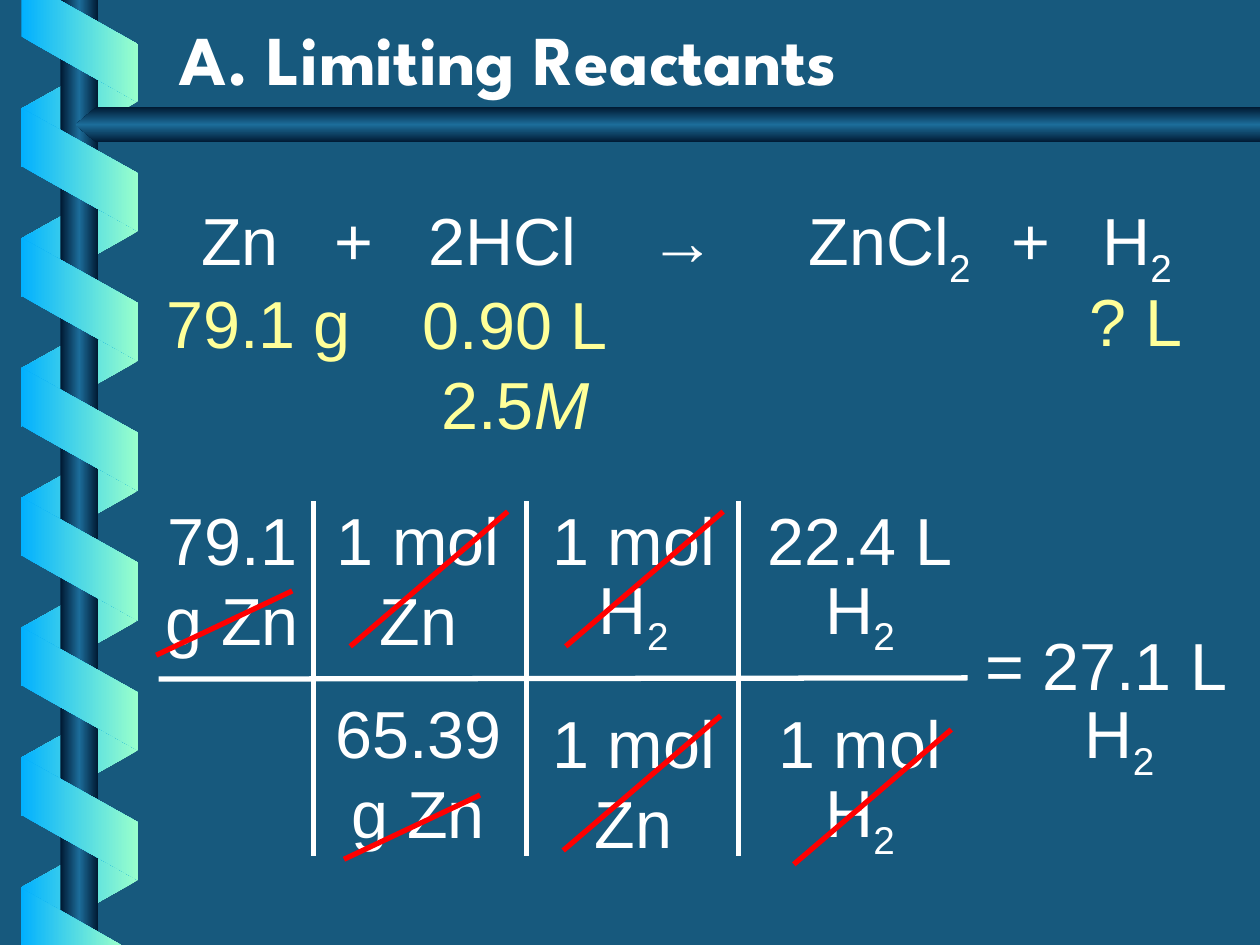
from dataclasses import dataclass

from lxml.etree import SubElement
from pptx import Presentation
from pptx.dml.color import RGBColor as RGB
from pptx.enum.shapes import MSO_CONNECTOR as CONN, MSO_SHAPE as SHAPE
from pptx.enum.text import MSO_ANCHOR as ANCHOR, PP_ALIGN as ALIGN
from pptx.oxml import parse_xml
from pptx.oxml.ns import nsdecls, qn
from pptx.util import Inches, Pt


@dataclass(frozen=True)
class Theme:
    background: str = "17597D"
    white: str = "FFFFFF"
    given: str = "FFFF99"
    strike: str = "FF0000"
    shadow: str = "001932"
    ribbon: tuple = ((0, "01B0FF"), (100, "99FFCC"))
    ribbon_back: tuple = ((0, "99FFCC"), (100, "01B0FF"))
    bar: tuple = ((0, "001932"), (50, "1C6D9A"), (100, "001932"))
    title_font: str = "League Spartan"
    body_font: str = "Arial"
    title_size: float = 40
    body_size: float = 38
    leading: float = 45.6
    line_width: float = 3


class SlideBuilder:
    def __init__(self, slide, theme):
        self.slide, self.theme = slide, theme
        fill = slide.background.fill
        fill.solid()
        fill.fore_color.rgb = RGB.from_string(theme.background)

    def gradient(self, sp, stops, angle=0):
        sp.shadow.inherit = False
        sp.line.fill.background()
        sp.fill.background()
        gs = "".join(
            f'<a:gs pos="{pos * 1000}"><a:srgbClr val="{color}"/></a:gs>'
            for pos, color in stops
        )
        grad = parse_xml(
            f'<a:gradFill {nsdecls("a")} rotWithShape="0"><a:gsLst>{gs}</a:gsLst>'
            f'<a:lin ang="{angle * 60000}" scaled="1"/></a:gradFill>'
        )
        props = sp._element.spPr
        props.replace(props.find(qn("a:noFill")), grad)

    def shape(self, kind, box, stops, angle=0, rotation=0, flip=False, adj=None):
        sp = self.slide.shapes.add_shape(kind, *map(Inches, box))
        sp.rotation = rotation
        if adj is not None:
            sp.adjustments[0] = adj
        if flip:
            sp._element.spPr.xfrm.set("flipH", "1")
        self.gradient(sp, stops, angle)

    def outline(self, points, stops):
        start, *rest = [(Inches(x), Inches(y)) for x, y in points]
        builder = self.slide.shapes.build_freeform(*start)
        builder.add_line_segments(rest, close=True)
        self.gradient(builder.convert_to_shape(), stops)

    def line(self, x1, y1, x2, y2, color):
        ln = self.slide.shapes.add_connector(
            CONN.STRAIGHT, *map(Inches, (x1, y1, x2, y2))
        )
        ln.line.color.rgb = RGB.from_string(color)
        ln.line.width = Pt(self.theme.line_width)
        SubElement(ln._element.spPr, qn("a:effectLst"))

    def run(self, p, text, color, size, font, style=""):
        r = p.add_run()
        r.text = text
        r.font.size = Pt(size)
        r.font.color.rgb = RGB.from_string(color)
        props = r._r.get_or_add_rPr()
        if style == "sub":
            props.set("baseline", "-25000")
        elif style == "italic":
            r.font.italic = True
        elif style == "title":
            r.font.bold = True
            props.append(parse_xml(
                f'<a:effectLst {nsdecls("a")}><a:outerShdw dist="35921" dir="2700000">'
                f'<a:srgbClr val="{self.theme.shadow}"/></a:outerShdw></a:effectLst>'
            ))
        r.font.name = font

    def frame(self, box):
        tf = self.slide.shapes.add_textbox(*map(Inches, box)).text_frame
        tf.word_wrap = True
        return tf

    def title(self, box, text):
        t = self.theme
        tf = self.frame(box)
        tf.vertical_anchor = ANCHOR.BOTTOM
        self.run(tf.paragraphs[0], text, t.white, t.title_size, t.title_font, "title")

    def text(self, box, lines, color, align=ALIGN.CENTER, tabs=(), gap=0):
        t = self.theme
        tf = self.frame(box)
        for i, runs in enumerate(lines):
            p = tf.add_paragraph() if i else tf.paragraphs[0]
            p.alignment = align
            p.line_spacing = Pt(t.leading)
            p.space_before = Pt(gap if i == 2 else 0)
            if tabs:
                stops = SubElement(p._p.get_or_add_pPr(), qn("a:tabLst"))
                for pos in tabs:
                    SubElement(stops, qn("a:tab"), pos=str(Inches(pos)), algn="l")
            for text, *style in runs:
                self.run(p, text, color, t.body_size, t.body_font, *style)


def draw_binding(b):
    t = b.theme
    width, height, pitch = 0.98, 0.93, 1.03
    for i in range(7):
        b.shape(SHAPE.PARALLELOGRAM, (0.14, 0.37 + i * pitch, width, height),
                t.ribbon_back, rotation=90, flip=True, adj=0.56)
    b.shape(SHAPE.RECTANGLE, (0.48, 0, 0.3, 7.5), t.bar)
    for i in range(6):
        b.shape(SHAPE.PARALLELOGRAM, (0.14, 0.88 + i * pitch, width, height),
                t.ribbon, rotation=270, adj=0.56)
    b.outline([(0.17, 0), (0.17, 0.29), (1.09, 0.81), (1.09, 0.35), (0.47, 0)], t.ribbon)
    b.outline([(0.96, 7.5), (0.17, 7.05), (0.17, 7.5)], t.ribbon)
    b.shape(SHAPE.PENTAGON, (0.6, 0.85, 9.4, 0.28), t.bar, angle=90, flip=True, adj=0.59)


def draw_equation(b):
    t = b.theme
    equation = [("Zn\t+\t2HCl\t→\tZnCl",), ("2", "sub"), ("\t+\tH",), ("2", "sub")]
    b.text((1.5, 1.62, 8.13, 0.9), [equation], t.white, ALIGN.LEFT,
           tabs=(1.06, 1.8, 3.56, 4.82, 6.43, 7.15))
    b.text((1.22, 2.19, 2, 0.78), [[("79.1 g",)]], t.given, ALIGN.LEFT)
    b.text((8.55, 2.17, 1.27, 0.78), [[("? L",)]], t.given, ALIGN.LEFT)
    b.text((3.09, 2.2, 2, 1.4), [[("0.90 L",)], [("2.5",), ("M", "italic")]], t.given)


def draw_conversion(b):
    t = b.theme
    mol, zinc, grams = [("1 mol",)], [("Zn",)], [("g Zn",)]
    hydrogen = [("H",), ("2", "sub")]
    columns = [
        (1.17, 1.35, 0, [[("79.1",)], grams]),
        (2.53, 1.58, 19, [mol, zinc, [("65.39",)], grams]),
        (4.25, 1.56, 25, [mol, hydrogen, mol, zinc]),
        (5.9, 1.85, 25, [[("22.4 L",)], hydrogen, mol, hydrogen]),
    ]
    for left, width, gap, lines in columns:
        b.text((left, 3.91, width, 0.62 * len(lines) + 0.4), lines, t.white, gap=gap)
    b.text((7.72, 4.9, 2.28, 1.77), [[("= 27.1 L",)], [("\tH",), ("2", "sub")]],
           t.white, ALIGN.LEFT, tabs=(0.79,))

    b.line(1.26, 5.39, 7.68, 5.38, t.white)
    for x in (2.49, 4.18, 5.86):
        b.line(x, 3.98, x, 6.79, t.white)

    mole_strikes = [(4.03, 4.06), (5.72, 5.68), (5.74, 4.06), (7.55, 5.79)]
    gram_strikes = [(2.32, 4.69), (3.81, 6.31)]
    for starts, dx, dy in ((mole_strikes, 1.25, 1.07), (gram_strikes, 1.08, 0.51)):
        for x, y in starts:
            b.line(x, y, x - dx, y + dy, t.strike)


def main():
    prs = Presentation()
    prs.slide_width, prs.slide_height = Inches(10), Inches(7.5)
    b = SlideBuilder(prs.slides.add_slide(prs.slide_layouts[6]), Theme())
    draw_binding(b)
    b.title((1.33, 0, 8.5, 0.84), "A. Limiting Reactants")
    draw_equation(b)
    draw_conversion(b)
    prs.save("out.pptx")


if __name__ == "__main__":
    main()
